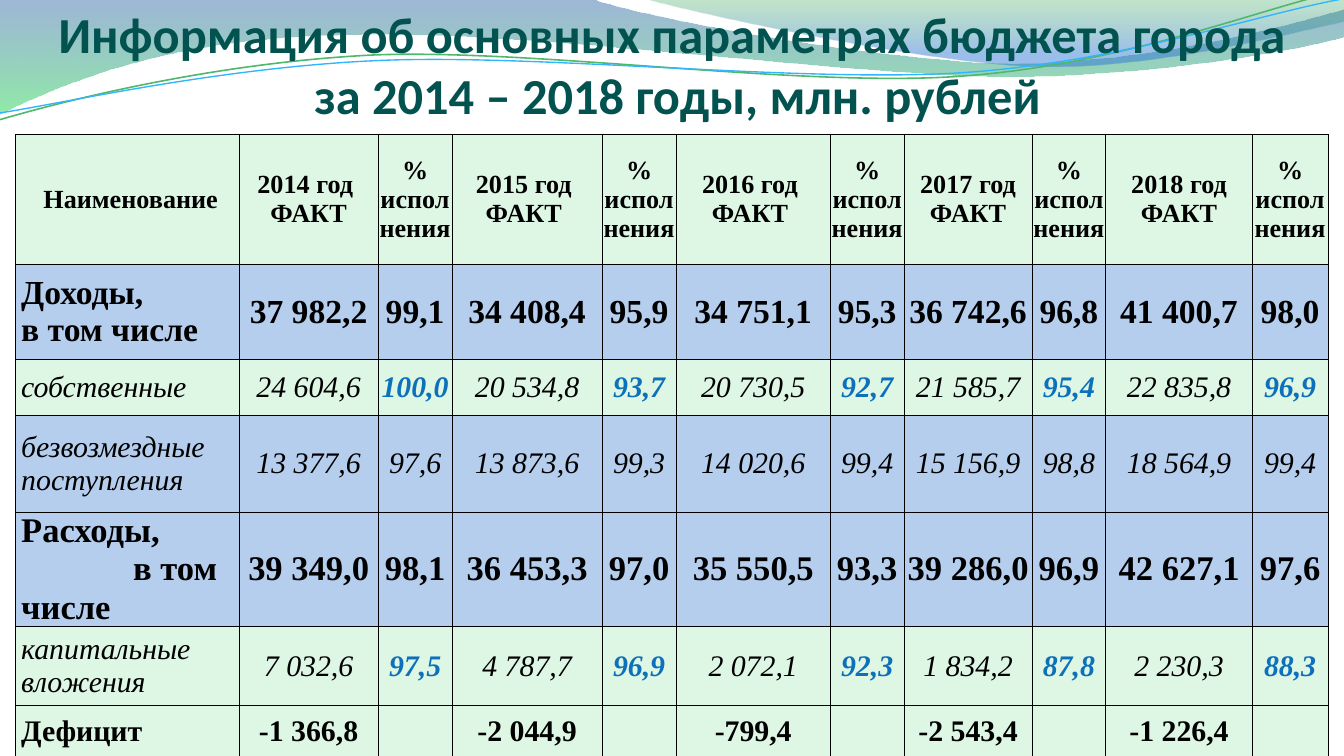
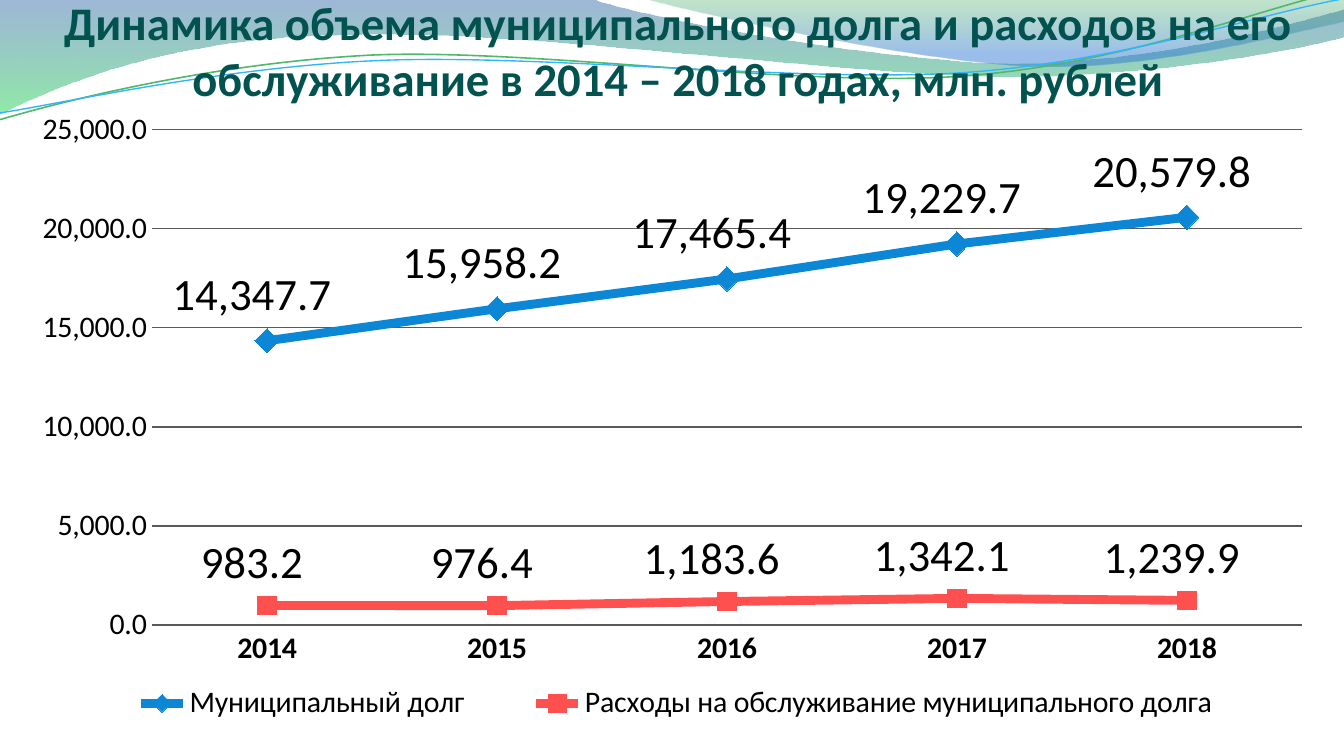
from dataclasses import dataclass

from lxml import etree
from pptx import Presentation
from pptx.chart.data import CategoryChartData
from pptx.dml.color import RGBColor
from pptx.enum.chart import (XL_CHART_TYPE, XL_LABEL_POSITION, XL_LEGEND_POSITION,
                             XL_MARKER_STYLE, XL_TICK_MARK)
from pptx.enum.text import MSO_ANCHOR, PP_ALIGN
from pptx.oxml import parse_xml
from pptx.oxml.ns import nsdecls, qn
from pptx.util import Pt

LEFT, CENTER = PP_ALIGN.LEFT, PP_ALIGN.CENTER
MIDDLE, BOTTOM = MSO_ANCHOR.MIDDLE, MSO_ANCHOR.BOTTOM
NO_TICKS = XL_TICK_MARK.NONE
DIAMOND, SQUARE = XL_MARKER_STYLE.DIAMOND, XL_MARKER_STYLE.SQUARE
LINE_MARKERS = XL_CHART_TYPE.LINE_MARKERS
LEGEND_BOTTOM, LABEL_ABOVE = XL_LEGEND_POSITION.BOTTOM, XL_LABEL_POSITION.ABOVE


@dataclass(frozen=True)
class Theme:
    title_font: str = "Calibri"
    table_font: str = "Times New Roman"
    chart_font: str = "TeX Gyre Pagella"
    title: str = "025250"
    ink: str = "000000"
    accent: str = "0D70BB"
    pale_green: str = "DEF6E4"
    pale_blue: str = "B5CEED"
    grid: str = "595959"
    debt: str = "0B87D6"
    service: str = "FF5050"
    header_size: float = 14
    detail_size: float = 16
    income_size: float = 18
    expense_size: float = 18.5
    chart_size: float = 10
    axis_size: float = 16
    label_size: float = 24
    budget_title_size: float = 27
    debt_title_size: float = 25


theme = Theme()
rgb = RGBColor.from_string


def write(frame, *paragraphs, font, size, color=theme.ink, bold=False, italic=False,
          align=CENTER, last_indent=0):
    """Fill a text frame; a newline inside a paragraph is a line break."""
    frame.word_wrap = True
    for number, text in enumerate(paragraphs):
        paragraph = frame.add_paragraph() if number else frame.paragraphs[0]
        paragraph.alignment = align
        for line_number, line in enumerate(text.split("\n")):
            if line_number:
                paragraph.add_line_break()
            run = paragraph.add_run()
            run.text = line
            run.font.name, run.font.size = font, Pt(size)
            run.font.bold, run.font.italic = bold, italic
            run.font.color.rgb = rgb(color)
    if last_indent:
        properties = paragraph._p.get_or_add_pPr()
        properties.set("marL", "0")
        properties.set("indent", str(Pt(last_indent)))


def chart_layout(target, **points):
    """Manual chart layout from lengths in points."""
    fractions = "".join(
        f'<c:{key} val="{value / (chart_width if key in "xw" else chart_height):.4f}"/>'
        for key, value in points.items())
    return parse_xml(f'<c:layout {nsdecls("c")}><c:manualLayout>{target}'
                     f'<c:xMode val="edge"/><c:yMode val="edge"/>{fractions}'
                     '</c:manualLayout></c:layout>')


prs = Presentation()
prs.slide_width, prs.slide_height = Pt(720), Pt(405)
blank = prs.slide_layouts[6]
budget_slide, debt_slide = [prs.slides.add_slide(blank) for _ in range(2)]

# Header waves: start point, then lines (x, y) and curves (two controls, end)
waves = [
    ([(0, 0), (316.8, -0.7), (342.7, 9.4, 478.1, 33.8, 545.8, 33.8),
      (614.2, 33.8, 689.8, 13.7, 720, 5), (720.7, 19.4),
      (707.8, 23.8, 626.4, 41, 537.1, 41), (447.8, 40.3, 275, 15.1, 185, 18.7),
      (92.9, 19.4, 33.1, 44.6, -0.7, 61.2)],
     [(0, "2960A7", 45), (1, "35DA5E", 55)], None),
    ([(344.9, -0.7), (366.5, 5.8, 491, 33.1, 553.7, 35.3),
      (616.3, 37.4, 691.9, 17.3, 720, 11.5), (720, 0)],
     [(0, "36A752", 30), (0.8, "2472D3", 45)], None),
    ([(0, 64.1), (34.6, 54, 113.8, 33.8, 199.4, 29.5),
      (285.1, 25.9, 426.2, 46.8, 512.6, 41), (599.8, 35.3, 676.1, 4.3, 718.6, -5)],
     None, ("50B86A", 0.85)),
    ([(0, 60.5), (33.8, 55.4, 118.1, 36, 203.8, 32.4),
      (290.2, 28.8, 429.8, 44.6, 516.2, 38.9), (601.9, 33.1, 675.4, 7.2, 720, -0.7)],
     None, ("31B6FD", 0.75)),
]
for outline, gradient, stroke in waves:
    corners = [(Pt(segment[-2]), Pt(segment[-1])) for segment in outline]
    builder = budget_slide.shapes.build_freeform(*corners[0])
    builder.add_line_segments(corners[1:], close=bool(gradient))
    wave = builder.convert_to_shape()
    wave.shadow.inherit = False
    # Bend the curved segments
    for segment, line_to in zip(outline[1:], list(wave._element.iter(qn("a:lnTo")))):
        if len(segment) == 6:
            line_to.tag = qn("a:cubicBezTo")
            for position in (0, 1):
                control = etree.Element(qn("a:pt"))
                control.set("x", str(Pt(segment[2 * position]) - wave.left))
                control.set("y", str(Pt(segment[2 * position + 1]) - wave.top))
                line_to.insert(position, control)
    if gradient:
        wave.line.fill.background()
        wave.fill.gradient()
        wave.fill.gradient_angle = 270
        for stop, (position, color, opacity) in zip(wave.fill.gradient_stops, gradient):
            stop.position = position
            stop.color.rgb = rgb(color)
            alpha = etree.SubElement(stop._gs.find(qn("a:srgbClr")), qn("a:alpha"))
            alpha.set("val", str(opacity * 1000))
    else:
        color, width = stroke
        wave.fill.background()
        wave.line.color.rgb = rgb(color)
        wave.line.width = Pt(width)
    # Both slides share the wave through their layout
    blank.shapes._spTree.append(wave._element)

# Budget table: label, values, size, bold, accented percents, fill
years = range(2014, 2019)
percent = "% исполнения"
green, blue = theme.pale_green, theme.pale_blue
detail, income, expense = theme.detail_size, theme.income_size, theme.expense_size
budget_rows = [
    ([" Наименование"],
     ["2014 год \nФАКТ", percent, "2015 год \nФАКТ ", percent, "2016 год \nФАКТ ", percent,
      "2017 год ФАКТ", percent, "2018 год ФАКТ", percent],
     theme.header_size, True, False, green),
    (["Доходы,\nв том числе"],
     ["37 982,2", "99,1", "34 408,4", "95,9", "34 751,1", "95,3",
      "36 742,6", "96,8", "41 400,7", "98,0"], income, True, False, blue),
    (["собственные"],
     ["24 604,6", "100,0", "20 534,8", "93,7", "20 730,5", "92,7",
      "21 585,7", "95,4", "22 835,8", "96,9"], detail, False, True, green),
    (["безвозмездные поступления"],
     ["13 377,6", "97,6", "13 873,6", "99,3", "14 020,6", "99,4",
      "15 156,9", "98,8", "18 564,9", "99,4"], detail, False, False, blue),
    (["Расходы,", "в том числе"],
     ["39 349,0", "98,1", "36 453,3", "97,0", "35 550,5", "93,3",
      "39 286,0", "96,9", "42 627,1", "97,6"], expense, True, False, blue),
    (["капитальные вложения"],
     ["7 032,6", "97,5", "4 787,7", "96,9", "2 072,1", "92,3",
      "1 834,2", "87,8", "2 230,3", "88,3"], detail, False, True, green),
    (["Дефицит"],
     ["-1 366,8", "", "-2 044,9", "", "-799,4", "",
      "-2 543,4", "", "-1 226,4", ""], detail, True, False, green),
]
column_widths = [119.8, 74.3, 39.8, 80.2, 39.8, 82.5, 39.6, 68.5, 39.6, 78.4, 40.6]
row_heights = [69.8, 50.6, 30.2, 51.8, 50.4, 42.5, 28]
budget = budget_slide.shapes.add_table(
    len(row_heights), len(column_widths), Pt(8.4), Pt(72),
    Pt(sum(column_widths)), Pt(sum(row_heights))).table
budget.first_row = budget.horz_banding = False
for column, width in zip(budget.columns, column_widths):
    column.width = Pt(width)
for row, height in zip(budget.rows, row_heights):
    row.height = Pt(height)

for r, (label, values, size, bold, accented, fill) in enumerate(budget_rows):
    for c, paragraphs in enumerate([label] + [[value] for value in values]):
        cell = budget.cell(r, c)
        is_label = c == 0 and r > 0
        is_accent = accented and c > 0 and c % 2 == 0
        cell.vertical_anchor = MIDDLE
        cell.margin_left = cell.margin_right = Pt(3 if is_label else 0)
        cell.margin_top = cell.margin_bottom = Pt(0)
        for side in ("lnL", "lnR", "lnT", "lnB"):
            cell._tc.get_or_add_tcPr().append(parse_xml(
                f'<a:{side} {nsdecls("a")} w="{Pt(0.5)}"><a:solidFill>'
                f'<a:srgbClr val="{theme.ink}"/></a:solidFill></a:{side}>'))
        cell.fill.solid()
        cell.fill.fore_color.rgb = rgb(fill)
        if paragraphs != [""]:
            write(cell.text_frame, *paragraphs, font=theme.table_font, size=size,
                  color=theme.accent if is_accent else theme.ink,
                  bold=bold or is_accent, italic=not bold,
                  align=LEFT if is_label else CENTER,
                  last_indent=60 if len(paragraphs) > 1 else 0)

# Debt chart
debt_series = [
    ("Муниципальный долг", [14347.7, 15958.2, 17465.4, 19229.7, 20579.8],
     theme.debt, DIAMOND, 13),
    ("Расходы на обслуживание муниципального долга",
     [983.2, 976.4, 1183.6, 1342.1, 1239.9], theme.service, SQUARE, 10),
]
AMOUNT_FORMAT = "#,##0.0"
LABEL_FORMAT = "#,##0.0_р_."
chart_width, chart_height = 702.7, 342
debt_data = CategoryChartData(number_format=AMOUNT_FORMAT)
debt_data.categories = [str(year) for year in years]
for name, values, *_ in debt_series:
    debt_data.add_series(name, values)
chart = debt_slide.shapes.add_chart(LINE_MARKERS, Pt(8.6), Pt(53.3), Pt(chart_width),
                                    Pt(chart_height), debt_data).chart
chart.has_title = False
chart.font.name, chart.font.size = theme.chart_font, Pt(theme.chart_size)
chart.font.color.rgb = rgb(theme.ink)
chart.has_legend = True
chart.legend.position = LEGEND_BOTTOM
chart.legend.include_in_layout = False

# Axes and legend
year_axis, amount_axis = chart.category_axis, chart.value_axis
for font in (year_axis.tick_labels.font, amount_axis.tick_labels.font, chart.legend.font):
    font.name, font.size = theme.title_font, Pt(theme.axis_size)
    font.color.rgb = rgb(theme.ink)
year_axis.tick_labels.font.bold = True
for axis in (year_axis, amount_axis):
    axis.major_tick_mark = axis.minor_tick_mark = NO_TICKS
amount_axis.minimum_scale, amount_axis.maximum_scale = 0, 25000
amount_axis.major_unit = 5000
amount_axis.tick_labels.number_format = AMOUNT_FORMAT
amount_axis.tick_labels.number_format_is_linked = False
amount_axis.has_major_gridlines = True
for rule in (amount_axis.major_gridlines.format.line, year_axis.format.line):
    rule.color.rgb = rgb(theme.grid)
    rule.width = Pt(0.75)
amount_axis.format.line.fill.background()

# Places of the plot and the legend
plot_area, legend = chart._chartSpace.chart.plotArea, chart.legend._element
for part in (plot_area, legend):
    for layout in part.findall(qn("c:layout")):
        part.remove(layout)
plot_area.insert(0, chart_layout('<c:layoutTarget val="inner"/>',
                                 x=72.9, y=16.2, w=616, h=265.4))
legend.find(qn("c:legendPos")).addnext(chart_layout("", x=34, y=308, w=640, h=31))

# Series lines, markers and values
chart.plots[0].vary_by_categories = False
for series, (_, _, color, marker, marker_size) in zip(chart.plots[0].series, debt_series):
    series.smooth = False
    series.format.line.color.rgb = rgb(color)
    series.format.line.width = Pt(4.75)
    series.marker.style, series.marker.size = marker, marker_size
    series.marker.format.fill.solid()
    series.marker.format.fill.fore_color.rgb = rgb(color)
    series.marker.format.line.color.rgb = rgb(color)
    labels = series.data_labels
    labels.show_value = True
    labels.position = LABEL_ABOVE
    labels.number_format, labels.number_format_is_linked = LABEL_FORMAT, False
    labels.font.name, labels.font.size = theme.title_font, Pt(theme.label_size)
    labels.font.color.rgb = rgb(theme.ink)

# Titles
for slide, top, size, text in [
    (budget_slide, 9.8, theme.budget_title_size,
     "Информация об основных параметрах бюджета города \nза 2014 – 2018 годы, млн. рублей"),
    (debt_slide, 0, theme.debt_title_size,
     "Динамика объема муниципального долга и расходов на его "
     "обслуживание в 2014 – 2018 годах, млн. рублей"),
]:
    frame = slide.shapes.add_textbox(Pt(14.2), Pt(top), Pt(697.7), Pt(56.9)).text_frame
    frame.margin_left = frame.margin_right = frame.margin_bottom = Pt(0)
    frame.margin_top = Pt(3.6)
    frame.vertical_anchor = BOTTOM
    write(frame, text, font=theme.title_font, size=size, color=theme.title, bold=True)

prs.save("out.pptx")
